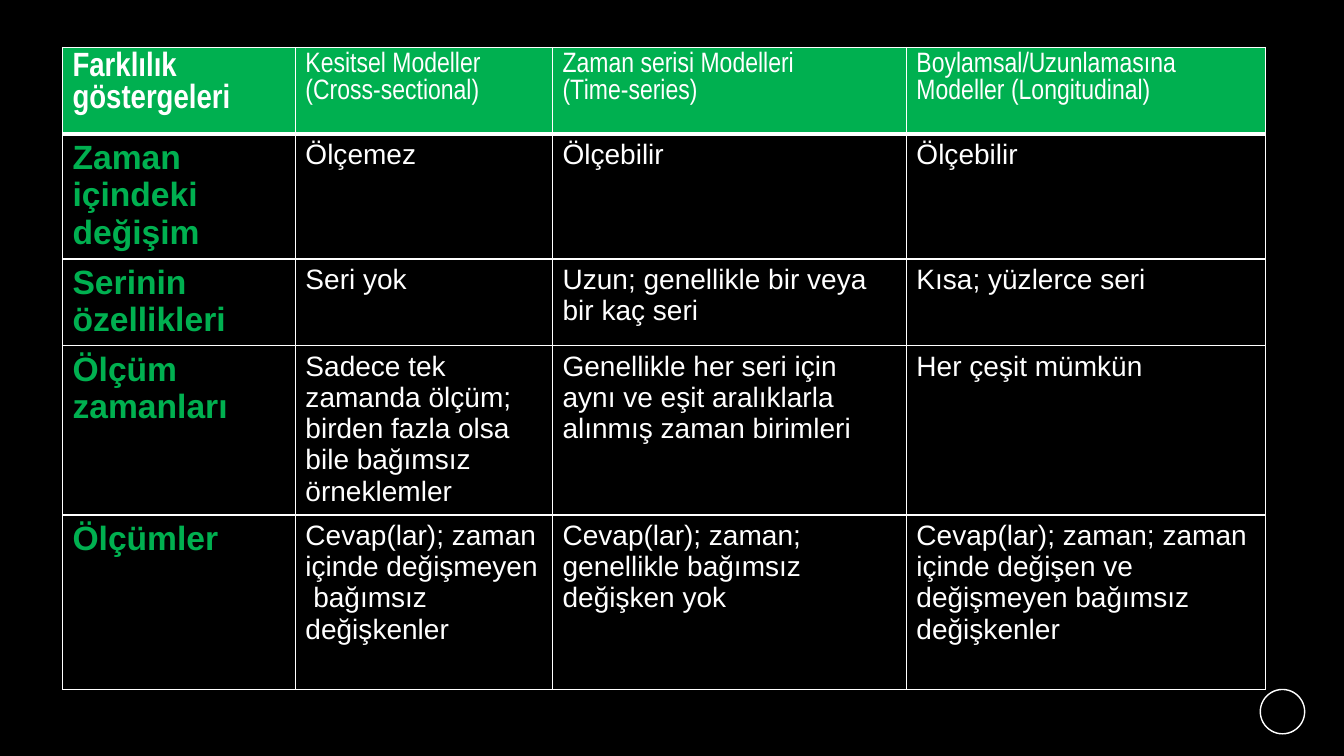
from lxml import etree
from pptx import Presentation, util as u
from pptx.dml.color import RGBColor
from pptx.enum import shapes
from pptx.oxml.ns import qn

theme = {
    "back": RGBColor.from_string("000000"),
    "ink": RGBColor.from_string("FFFFFF"),
    "green": RGBColor.from_string("00B050"),
    "label": u.Pt(24),
    "body": u.Pt(20),
    "head": "Arial Narrow",
    "text": "Arial",
}
cols = [2.31, 2.55, 3.51, 3.56]
rows = [0.86, 1.24, 0.86, 1.68, 1.73]
data = [
    ["Farklılık göstergeleri", "Kesitsel Modeller\n(Cross-sectional)",
     "Zaman serisi Modelleri\n(Time-series)",
     "Boylamsal/Uzunlamasına Modeller (Longitudinal)"],
    ["Zaman içindeki değişim", "Ölçemez", "Ölçebilir", "Ölçebilir"],
    ["Serinin özellikleri", "Seri yok",
     "Uzun; genellikle bir veya bir kaç seri", "Kısa; yüzlerce seri"],
    ["Ölçüm zamanları",
     "Sadece tek zamanda ölçüm; birden fazla olsa bile bağımsız örneklemler",
     "Genellikle her seri için aynı ve eşit aralıklarla alınmış zaman birimleri",
     "Her çeşit mümkün"],
    ["Ölçümler", "Cevap(lar); zaman içinde değişmeyen  bağımsız değişkenler",
     "Cevap(lar); zaman; genellikle bağımsız değişken yok",
     "Cevap(lar); zaman; zaman içinde değişen ve değişmeyen bağımsız değişkenler"],
]


def edge(cell, side, width):
    props = cell._tc.get_or_add_tcPr()
    line = etree.SubElement(props, qn("a:" + side), w=str(u.Pt(width)))
    fill = etree.SubElement(line, qn("a:solidFill"))
    etree.SubElement(fill, qn("a:srgbClr"), val=str(theme["ink"]))


deck = Presentation()
deck.slide_width, deck.slide_height = u.Inches(13.33), u.Inches(7.5)
slide = deck.slides.add_slide(deck.slide_layouts[6])
slide.background.fill.solid()
slide.background.fill.fore_color.rgb = theme["back"]

ring = slide.shapes.add_shape(
    shapes.MSO_SHAPE.OVAL, u.Inches(12.5), u.Inches(6.84), u.Inches(0.44), u.Inches(0.44))
ring.shadow.inherit = False
ring.fill.background()
ring.line.color.rgb = theme["ink"]
ring.line.width = u.Pt(1)

grid = slide.shapes.add_table(
    len(rows), len(cols), u.Inches(0.62), u.Inches(0.47),
    u.Inches(sum(cols)), u.Inches(sum(rows))).table
grid.first_row = grid.horz_banding = False
for col, width in zip(grid.columns, cols):
    col.width = u.Inches(width)
for row, height in zip(grid.rows, rows):
    row.height = u.Inches(height)

for r, line in enumerate(data):
    for c, words in enumerate(line):
        cell = grid.cell(r, c)
        cell.text_frame.text = words
        for para in cell.text_frame.paragraphs:
            for run in para.runs:
                font = run.font
                font.name = theme["head" if r == 0 else "text"]
                font.size = theme["label" if c == 0 else "body"]
                font.bold = c == 0
                font.color.rgb = theme["green" if c == 0 and r else "ink"]
        for side in ("lnL", "lnR", "lnT", "lnB"):
            thick = (r == 0 and side == "lnB") or (r == 1 and side == "lnT")
            edge(cell, side, 3 if thick else 1)
        if r == 0:
            cell.fill.solid()
            cell.fill.fore_color.rgb = theme["green"]
        else:
            cell.fill.background()

deck.save("out.pptx")
